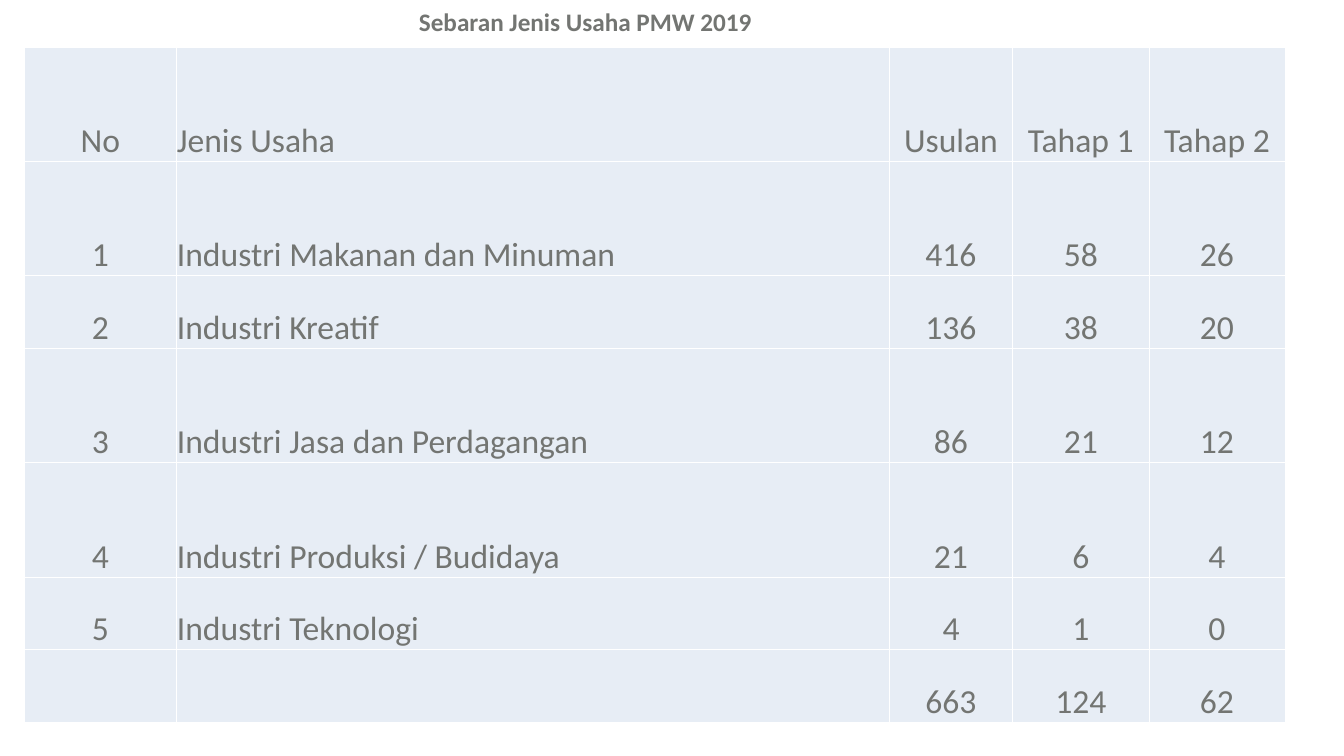
from lxml import etree
from pptx import Presentation
from pptx.dml.color import RGBColor
from pptx.enum.text import MSO_ANCHOR, PP_ALIGN
from pptx.oxml.ns import qn
from pptx.util import Inches, Pt

LEFT, CENTER = PP_ALIGN.LEFT, PP_ALIGN.CENTER
MIDDLE, BOTTOM = MSO_ANCHOR.MIDDLE, MSO_ANCHOR.BOTTOM

TITLE = "Sebaran Jenis Usaha PMW 2019"
ROWS = [
    ("No", "Jenis Usaha", "Usulan", "Tahap 1", "Tahap 2"),
    ("1", "Industri Makanan dan Minuman", "416", "58", "26"),
    ("2", "Industri Kreatif", "136", "38", "20"),
    ("3", "Industri Jasa dan Perdagangan", "86", "21", "12"),
    ("4", "Industri Produksi / Budidaya", "21", "6", "4"),
    ("5", "Industri Teknologi", "4", "1", "0"),
    ("", "", "663", "124", "62"),
]
TALL, SHORT = 2.27, 1.44
ROW_HEIGHTS = [TALL, TALL, SHORT, TALL, TALL, SHORT, SHORT]
COLUMN_WIDTHS = [3.02, 14.14, 2.45, 2.7, 2.7]
COLUMN_ALIGNMENTS = [CENTER, LEFT, CENTER, CENTER, CENTER]
FONT, TEXT_COLOR, CELL_COLOR, BORDER_COLOR = "Calibri", "737572", "E7EDF5", "FFFFFF"


def color(value):
    return RGBColor.from_string(value)


def write(text_frame, text, size, alignment=LEFT, bold=False):
    paragraph = text_frame.paragraphs[0]
    paragraph.alignment = alignment
    paragraph.font.size = Pt(size)
    if not text:
        return
    run = paragraph.add_run()
    run.text = text
    run.font.name = FONT
    run.font.size = Pt(size)
    run.font.bold = bold
    run.font.color.rgb = color(TEXT_COLOR)


def add_borders(cell, value, width):
    properties = cell._tc.get_or_add_tcPr()
    for index, side in enumerate(("lnL", "lnR", "lnT", "lnB")):
        line = etree.Element(qn(f"a:{side}"), w=str(Pt(width)))
        fill = etree.SubElement(line, qn("a:solidFill"))
        etree.SubElement(fill, qn("a:srgbClr"), val=value)
        properties.insert(index, line)


def add_title(slide):
    title = slide.shapes.title
    title.left, title.top = Inches(8.21), Inches(0.08)
    title.width, title.height = Inches(8.01), Inches(0.71)
    title.text_frame.word_wrap = True
    title.text_frame.vertical_anchor = MIDDLE
    write(title.text_frame, TITLE, size=36, bold=True)


def add_business_table(slide):
    frame = slide.shapes.add_table(
        len(ROWS), len(COLUMN_WIDTHS), Inches(0.48), Inches(0.93),
        Inches(sum(COLUMN_WIDTHS)), Inches(sum(ROW_HEIGHTS)))
    table = frame.table
    table.first_row = table.horz_banding = False
    for column, width in zip(table.columns, COLUMN_WIDTHS):
        column.width = Inches(width)
    for row, height, texts in zip(table.rows, ROW_HEIGHTS, ROWS):
        row.height = Inches(height)
        for cell, text, alignment in zip(row.cells, texts, COLUMN_ALIGNMENTS):
            cell.fill.solid()
            cell.fill.fore_color.rgb = color(CELL_COLOR)
            cell.vertical_anchor = BOTTOM
            cell.margin_left = cell.margin_right = cell.margin_top = Inches(0.01)
            cell.margin_bottom = 0
            add_borders(cell, BORDER_COLOR, width=1)
            write(cell.text_frame, text, size=48, alignment=alignment)


def main():
    presentation = Presentation()
    presentation.slide_width, presentation.slide_height = Inches(26.66), Inches(15)
    slide = presentation.slides.add_slide(presentation.slide_layouts.get_by_name("Title Only"))
    add_title(slide)
    add_business_table(slide)
    presentation.save("out.pptx")


if __name__ == "__main__":
    main()
